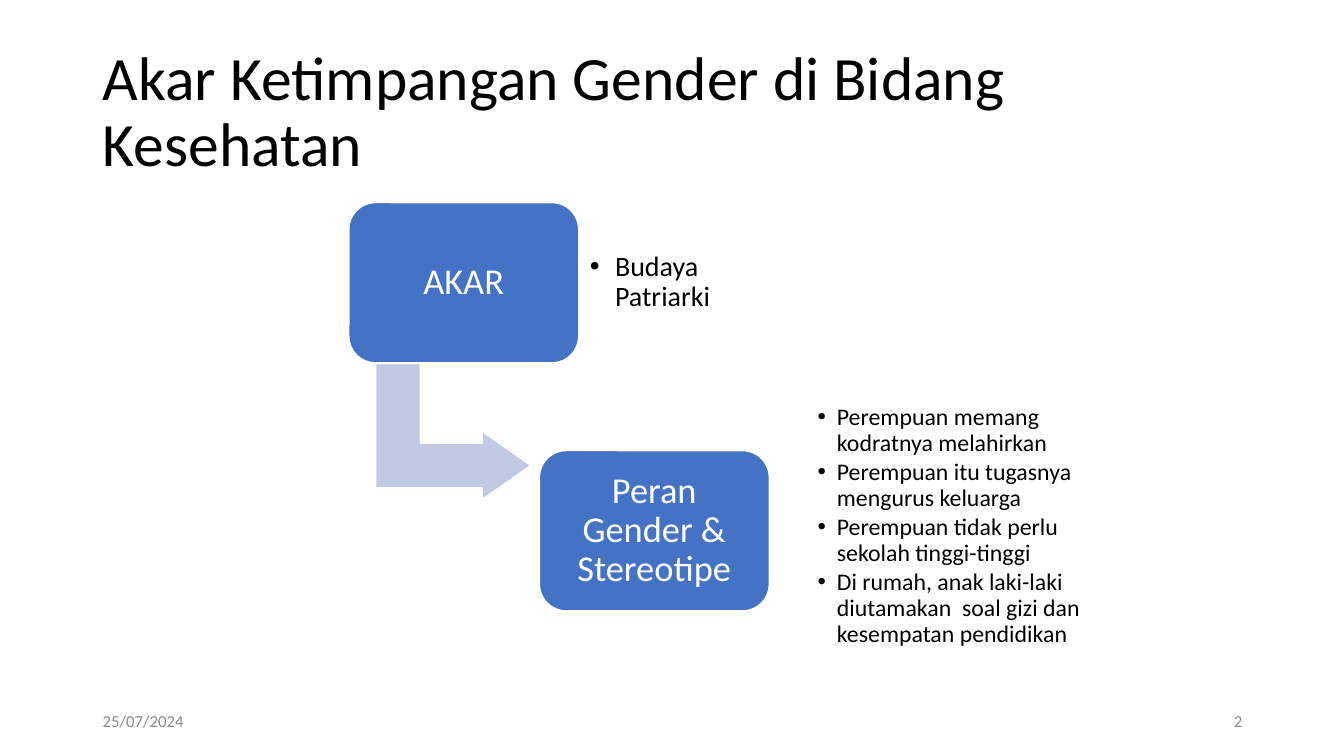
from pptx import Presentation
from pptx.dml.color import RGBColor
from pptx.enum.shapes import MSO_SHAPE
from pptx.enum.text import MSO_ANCHOR, MSO_AUTO_SIZE, PP_ALIGN
from pptx.util import Inches, Pt

ROUND, BENT = MSO_SHAPE.ROUNDED_RECTANGLE, MSO_SHAPE.BENT_UP_ARROW
MIDDLE, FIXED = MSO_ANCHOR.MIDDLE, MSO_AUTO_SIZE.NONE
LEFT, CENTER, RIGHT = PP_ALIGN.LEFT, PP_ALIGN.CENTER, PP_ALIGN.RIGHT
BLACK, WHITE, GRAY = "000000", "FFFFFF", "8C8C8C"
BLUE, PALE = "4472C4", "C1C9E4"
ROLES = [
    "Perempuan memang kodratnya melahirkan",
    "Perempuan itu tugasnya mengurus keluarga",
    "Perempuan tidak perlu sekolah tinggi-tinggi",
    "Di rumah, anak laki-laki diutamakan  soal gizi dan kesempatan pendidikan",
]


def color(code):
    return RGBColor.from_string(code)


def place(shape, box):
    shape.left, shape.top, shape.width, shape.height = map(Inches, box)


def write(shape, lines, size, code, align=LEFT, pad=(0.1, 0.05), space=0.9, after=0):
    """Fill a shape with paragraphs of one style."""
    frame = shape.text_frame
    frame.text = "\n".join(lines)
    frame.word_wrap = True
    frame.auto_size = FIXED
    frame.vertical_anchor = MIDDLE
    frame.margin_left = frame.margin_right = Inches(pad[0])
    frame.margin_top = frame.margin_bottom = Inches(pad[1])
    for para in frame.paragraphs:
        para.alignment = align
        para.line_spacing = space
        para.space_before = Pt(0)
        para.space_after = Pt(after)
        for run in para.runs:
            run.font.name = "Calibri"
            run.font.size = Pt(size)
            run.font.color.rgb = color(code)


def add_list(holder, box, lines, size, pad, indent):
    place(holder, box)
    write(holder, lines, size, BLACK, pad=(pad, pad), after=size * 0.15)
    for para in holder.text_frame.paragraphs:
        props = para._p.get_or_add_pPr()
        props.set("marL", str(Inches(indent)))
        props.set("indent", str(-Inches(indent)))


def add_form(slide, kind, box, fill, adjust):
    shape = slide.shapes.add_shape(kind, *map(Inches, box))
    shape.shadow.inherit = False
    shape.fill.solid()
    shape.fill.fore_color.rgb = color(fill)
    shape.line.color.rgb = color(WHITE)
    shape.line.width = Pt(1)
    for spot, value in enumerate(adjust):
        shape.adjustments[spot] = value
    return shape


def add_step(slide, left, top, label):
    shape = add_form(slide, ROUND, (left, top, 2.28, 1.59), BLUE, [0.167])
    write(shape, [label], 26, WHITE, CENTER, pad=(0.19, 0.19))


def add_foot(slide, left, label, align):
    box = slide.shapes.add_textbox(*map(Inches, (left, 6.95, 3, 0.4)))
    write(box, [label], 12, GRAY, align, space=1)


def main():
    deck = Presentation()
    deck.slide_width, deck.slide_height = Inches(13.33), Inches(7.5)
    slide = deck.slides.add_slide(deck.slide_layouts[3])
    title, cause, roles = slide.placeholders
    place(title, (0.92, 0.4, 11.78, 1.45))
    write(title, ["Akar Ketimpangan Gender di Bidang Kesehatan"], 44, BLACK)
    arrow = add_form(slide, BENT, (3.82, 3.51, 1.35, 1.54), PALE, [0.328, 0.25, 0.358])
    arrow.rotation = 90
    add_step(slide, 3.46, 2.01, "AKAR")
    add_step(slide, 5.35, 4.47, "Peran Gender & Stereotipe")
    add_list(cause, (5.74, 2.16, 1.66, 1.29), ["Budaya Patriarki"], 20, 0.11, 0.25)
    add_list(roles, (8.02, 3.75, 2.84, 2.94), ROLES, 17, 0.09, 0.19)
    add_foot(slide, 0.92, "25/07/2024", LEFT)
    add_foot(slide, 9.42, "2", RIGHT)
    deck.save("out.pptx")


if __name__ == "__main__":
    main()
